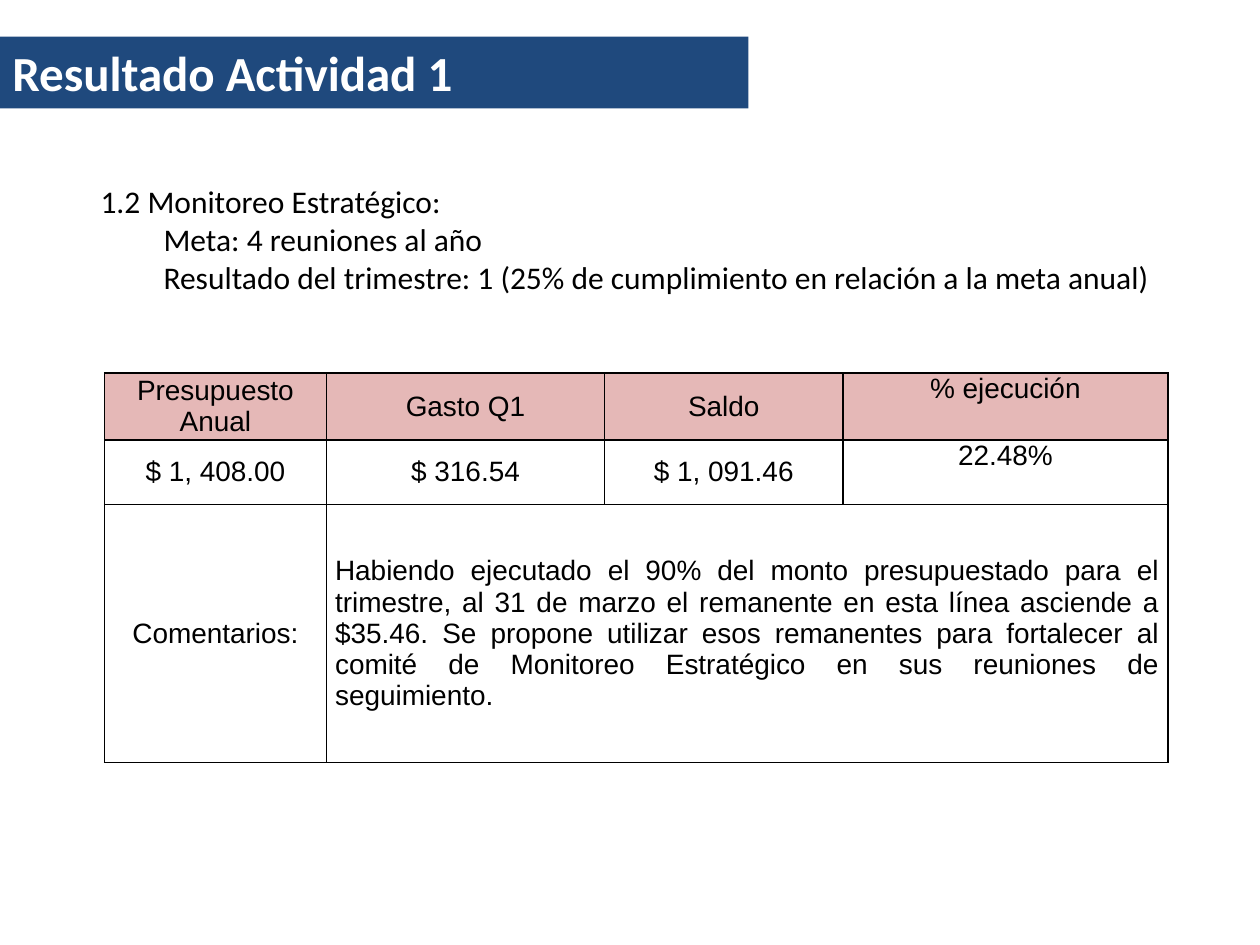
from dataclasses import dataclass
from typing import Optional

from lxml import etree
from pptx import Presentation
from pptx.dml.color import RGBColor
from pptx.enum import shapes, text
from pptx.oxml.ns import qn
from pptx.util import Inches, Pt


@dataclass(frozen=True)
class Theme:
    navy: str = "1F497D"
    rose: str = "E5B8B7"
    white: str = "FFFFFF"
    black: str = "000000"
    heading_font: str = "Calibri"
    table_font: str = "Arial"
    title_size: int = 28
    body_size: int = 18
    table_size: int = 16
    border_width: int = 1


@dataclass(frozen=True)
class Line:
    wording: str
    indent: float


@dataclass(frozen=True)
class Entry:
    wording: str
    fill: Optional[str] = None
    middle: bool = True
    align: text.PP_ALIGN = text.PP_ALIGN.CENTER


THEME = Theme()

GOAL_LINES = [
    Line("1.2 Monitoreo Estratégico:", 0.5),
    Line("Meta: 4 reuniones al año", 1),
    Line("Resultado del trimestre: 1 (25% de cumplimiento en relación a la meta anual)", 1),
]

COLUMN_WIDTHS = [1.76, 2.21, 1.89, 2.58]
ROW_HEIGHTS = [0.51, 0.51, 2.05]
BUDGET = [
    [
        Entry("Presupuesto Anual", THEME.rose),
        Entry("Gasto Q1", THEME.rose),
        Entry("Saldo", THEME.rose),
        Entry("% ejecución", THEME.rose, middle=False),
    ],
    [
        Entry("$ 1, 408.00"),
        Entry("$ 316.54"),
        Entry("$ 1, 091.46"),
        Entry("22.48%", middle=False),
    ],
    [
        Entry("Comentarios:"),
        Entry(
            "Habiendo ejecutado el 90% del monto presupuestado para el trimestre, "
            "al 31 de marzo el remanente en esta línea asciende a $35.46. "
            "Se propone utilizar esos remanentes para fortalecer al comité de "
            "Monitoreo Estratégico en sus reuniones de seguimiento.",
            align=text.PP_ALIGN.JUSTIFY,
        ),
    ],
]


def style_runs(paragraph, font: str, size: int, color: str, bold: bool = False) -> None:
    for run in paragraph.runs:
        run.font.name = font
        run.font.size = Pt(size)
        run.font.bold = bold
        run.font.color.rgb = RGBColor.from_string(color)


def draw_title(slide, wording: str) -> None:
    banner = slide.shapes.add_shape(
        shapes.MSO_SHAPE.RECTANGLE, 0, Inches(0.29), Inches(5.94), Inches(0.57)
    )
    banner.shadow.inherit = False
    banner.fill.solid()
    banner.fill.fore_color.rgb = RGBColor.from_string(THEME.navy)
    banner.line.fill.background()
    frame = banner.text_frame
    frame.text = wording
    frame.word_wrap = True
    frame.auto_size = text.MSO_AUTO_SIZE.SHAPE_TO_FIT_TEXT
    frame.vertical_anchor = text.MSO_ANCHOR.TOP
    title = frame.paragraphs[0]
    title.alignment = text.PP_ALIGN.LEFT
    style_runs(title, THEME.heading_font, THEME.title_size, THEME.white, bold=True)


def draw_goal(slide, lines: list[Line]) -> None:
    goal = slide.shapes.add_textbox(Inches(0.2), Inches(1.39), Inches(9.37), Inches(1.01))
    frame = goal.text_frame
    frame.text = "\n".join(line.wording for line in lines)
    frame.word_wrap = True
    frame.auto_size = text.MSO_AUTO_SIZE.SHAPE_TO_FIT_TEXT
    frame.vertical_anchor = text.MSO_ANCHOR.MIDDLE
    for paragraph, line in zip(frame.paragraphs, lines):
        paragraph.level = 1
        properties = paragraph._p.get_or_add_pPr()
        properties.set("marL", str(Inches(line.indent)))
        properties.set("indent", "0")
        style_runs(paragraph, THEME.heading_font, THEME.body_size, THEME.black)


def add_borders(cell) -> None:
    properties = cell._tc.get_or_add_tcPr()
    for side in ("lnL", "lnR", "lnT", "lnB"):
        border = etree.SubElement(
            properties, qn(f"a:{side}"), w=str(Pt(THEME.border_width))
        )
        fill = etree.SubElement(border, qn("a:solidFill"))
        etree.SubElement(fill, qn("a:srgbClr"), val=THEME.black)


def fill_cell(cell, entry: Entry) -> None:
    cell.text_frame.text = entry.wording
    cell.vertical_anchor = text.MSO_ANCHOR.MIDDLE if entry.middle else text.MSO_ANCHOR.TOP
    paragraph = cell.text_frame.paragraphs[0]
    paragraph.alignment = entry.align
    style_runs(paragraph, THEME.table_font, THEME.table_size, THEME.black)
    if entry.fill:
        cell.fill.solid()
        cell.fill.fore_color.rgb = RGBColor.from_string(entry.fill)


def draw_budget(slide, rows: list[list[Entry]]) -> None:
    budget = slide.shapes.add_table(
        len(ROW_HEIGHTS), len(COLUMN_WIDTHS), Inches(0.83), Inches(2.96),
        Inches(sum(COLUMN_WIDTHS)), Inches(sum(ROW_HEIGHTS)),
    ).table
    budget.first_row = budget.horz_banding = False
    for column, width in zip(budget.columns, COLUMN_WIDTHS):
        column.width = Inches(width)
    for row, height in zip(budget.rows, ROW_HEIGHTS):
        row.height = Inches(height)

    # Borders precede fills inside the cell properties
    for cell in budget.iter_cells():
        cell.margin_left = cell.margin_right = Inches(0.07)
        cell.margin_top = cell.margin_bottom = 0
        add_borders(cell)
        cell.fill.background()

    # The comment spans the last three columns
    budget.cell(2, 1).merge(budget.cell(2, 3))
    for r, row in enumerate(rows):
        for c, entry in enumerate(row):
            fill_cell(budget.cell(r, c), entry)


def main() -> None:
    deck = Presentation()
    deck.slide_width, deck.slide_height = Inches(10), Inches(7.5)
    slide = deck.slides.add_slide(deck.slide_layouts[6])
    draw_title(slide, "Resultado Actividad 1")
    draw_goal(slide, GOAL_LINES)
    draw_budget(slide, BUDGET)
    deck.save("out.pptx")


if __name__ == "__main__":
    main()
